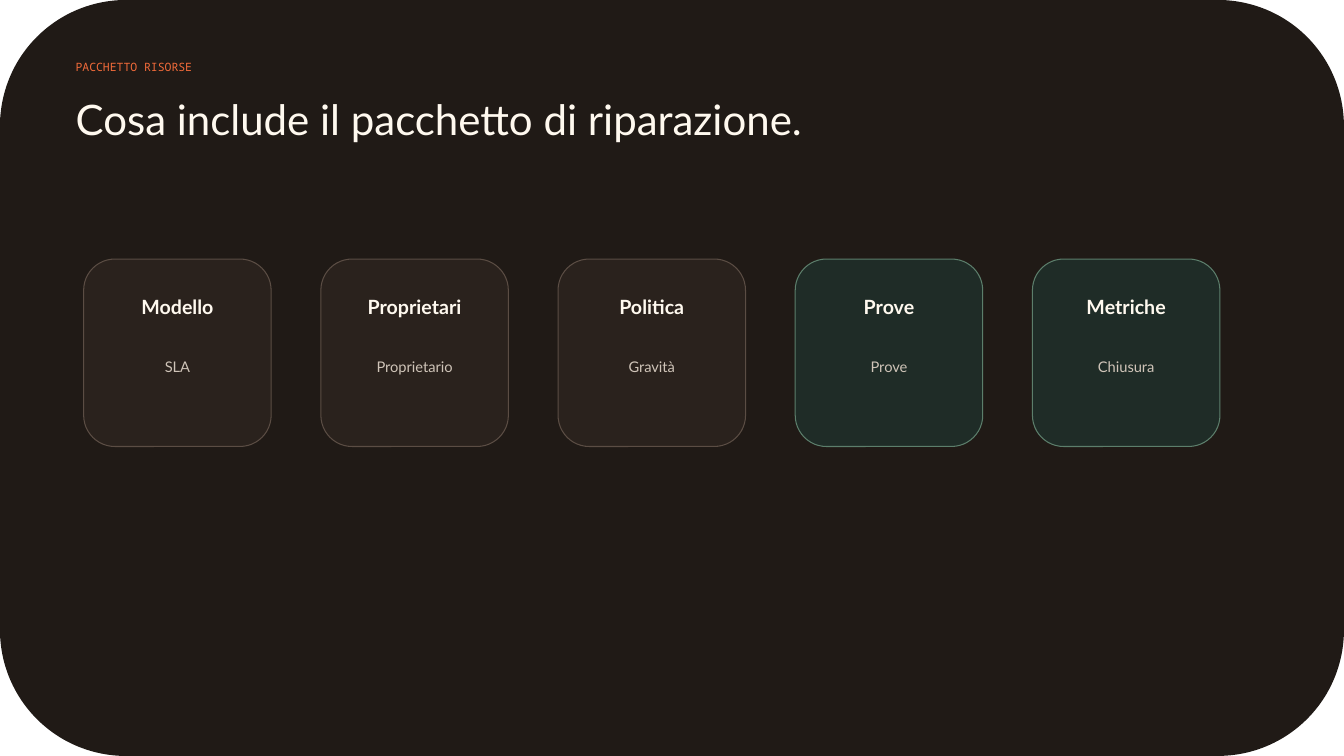
from dataclasses import dataclass

import pptx
import pptx.dml.color
import pptx.enum.shapes
import pptx.enum.text
import pptx.util
from pptx.util import Inches

ALIGN = pptx.enum.text.PP_ALIGN


@dataclass(frozen=True)
class Theme:
    ground: str = "201A16"
    accent: str = "F26B3A"
    light: str = "FFF9EF"
    muted: str = "CFC4B8"
    brown: tuple = ("2A221D", "5B4D44")  # card fill, card line
    green: tuple = ("1F2C27", "5C7E6B")
    sans: str = "Lato"
    mono: str = "Noto Sans Mono"
    kicker_size: float = 8.2
    title_size: float = 30
    name_size: float = 14
    detail_size: float = 10.5


THEME = Theme()

CARDS = [
    ("Modello", "SLA", THEME.brown),
    ("Proprietari", "Proprietario", THEME.brown),
    ("Politica", "Gravità", THEME.brown),
    ("Prove", "Prove", THEME.green),
    ("Metriche", "Chiusura", THEME.green),
]


def rgb(value):
    return pptx.dml.color.RGBColor.from_string(value)


def add_text(slide, text, x, y, w, h, *, size, color, font=THEME.sans,
             bold=False, align=ALIGN.LEFT):
    tf = slide.shapes.add_textbox(Inches(x), Inches(y), Inches(w), Inches(h)).text_frame
    tf.word_wrap = True
    tf.margin_left = tf.margin_top = tf.margin_right = tf.margin_bottom = 0
    p = tf.paragraphs[0]
    p.alignment = align
    r = p.add_run()
    r.text = text
    r.font.name = font
    r.font.size = pptx.util.Pt(size)
    r.font.bold = bold
    r.font.color.rgb = rgb(color)


def add_panel(slide, x, y, w, h, fill, line=None):
    sp = slide.shapes.add_shape(pptx.enum.shapes.MSO_SHAPE.ROUNDED_RECTANGLE,
                                Inches(x), Inches(y), Inches(w), Inches(h))
    sp.shadow.inherit = False
    sp.fill.solid()
    sp.fill.fore_color.rgb = rgb(fill)
    if line:
        sp.line.color.rgb = rgb(line)
        sp.line.width = pptx.util.Pt(0.75)
    else:
        sp.line.fill.background()


def add_header(slide, x, y, w):
    add_text(slide, "PACCHETTO RISORSE", x, y, w, 0.28,
             size=THEME.kicker_size, color=THEME.accent, font=THEME.mono)
    add_text(slide, "Cosa include il pacchetto di riparazione.", x, y + 0.33, w, 0.71,
             size=THEME.title_size, color=THEME.light)


def add_card(slide, x, y, side, name, detail, colors):
    add_panel(slide, x, y, side, side, *colors)
    # Both labels are centred on the card: 80% and 83% of its width
    for text, share, dy, h, style in (
        (name, 0.8, 0.36, 0.33,
         dict(size=THEME.name_size, color=THEME.light, bold=True)),
        (detail, 0.83, 0.98, 0.57,
         dict(size=THEME.detail_size, color=THEME.muted)),
    ):
        w = side * share
        add_text(slide, text, x + (side - w) / 2, y + dy, w, h,
                 align=ALIGN.CENTER, **style)


def add_card_row(slide, x, y, w, side):
    pitch = (w - side) / (len(CARDS) - 1)
    for i, card in enumerate(CARDS):
        add_card(slide, x + i * pitch, y, side, *card)


def main():
    prs = pptx.Presentation()
    prs.slide_width, prs.slide_height = Inches(13.33), Inches(7.5)
    slide = prs.slides.add_slide(prs.slide_layouts[6])

    # Rounded dark ground
    add_panel(slide, 0, 0, 13.33, 7.5, THEME.ground)
    # Kicker and title
    add_header(slide, 0.75, 0.6, 8.31)
    # Row of five cards
    add_card_row(slide, 0.83, 2.57, 11.27, 1.86)

    prs.save("out.pptx")


if __name__ == "__main__":
    main()
